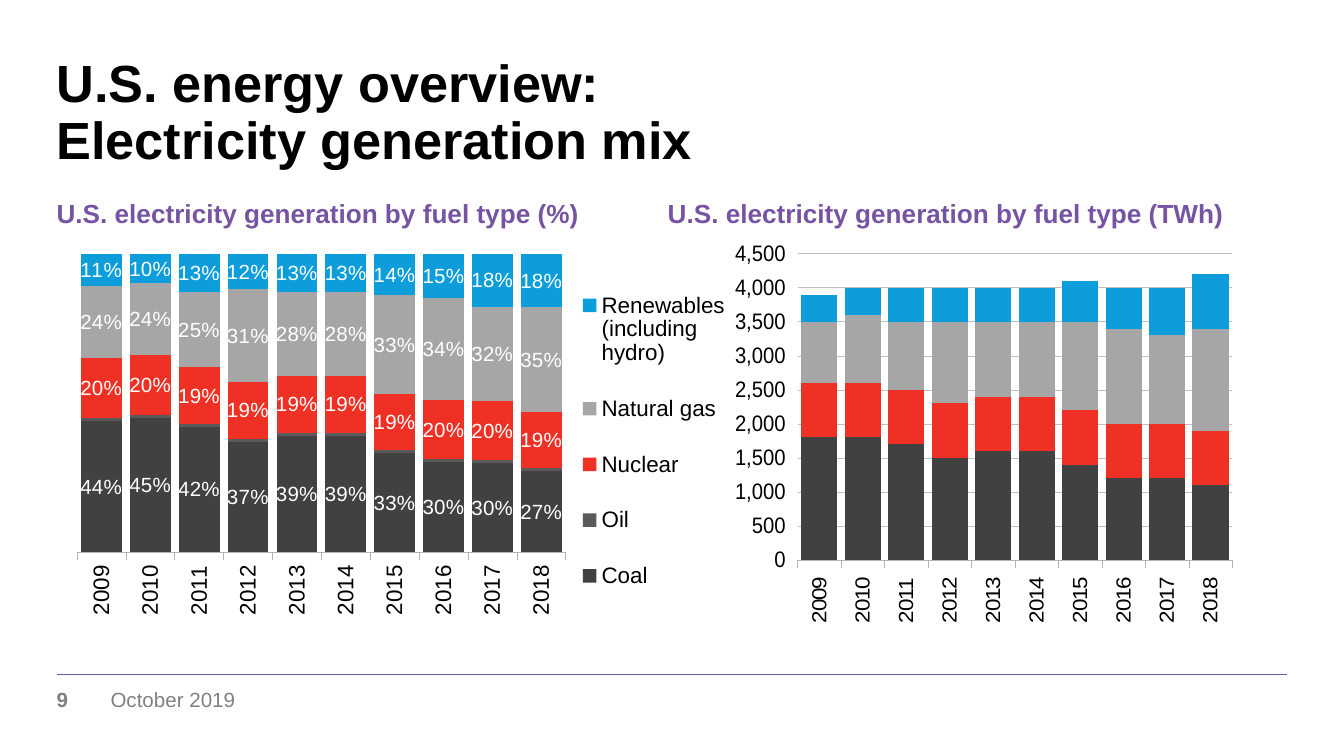
from lxml import etree
from pptx import Presentation
from pptx.chart.data import CategoryChartData
from pptx.dml.color import RGBColor
from pptx.enum.chart import XL_AXIS_CROSSES as CROSSES
from pptx.enum.chart import XL_CHART_TYPE as CHART
from pptx.enum.chart import XL_LEGEND_POSITION as LEGEND
from pptx.enum.chart import XL_TICK_LABEL_POSITION as LABELS
from pptx.enum.chart import XL_TICK_MARK as TICK
from pptx.enum.shapes import MSO_CONNECTOR
from pptx.oxml.ns import qn
from pptx.util import Cm, Pt

BLACK = RGBColor(0x00, 0x00, 0x00)
WHITE = RGBColor(0xFF, 0xFF, 0xFF)
PURPLE = RGBColor(0x76, 0x54, 0xA3)
GRAY = RGBColor(0x80, 0x80, 0x80)
AXIS = RGBColor(0xB3, 0xB3, 0xB3)
GRID = RGBColor(0xC0, 0xC0, 0xC0)
COAL = RGBColor(0x41, 0x41, 0x41)
OIL = RGBColor(0x5A, 0x5A, 0x5A)
NUCLEAR = RGBColor(0xEE, 0x31, 0x24)
GAS = RGBColor(0xA6, 0xA6, 0xA6)
RENEWABLES = RGBColor(0x0D, 0x9D, 0xDB)
FUEL_COLORS = [COAL, OIL, NUCLEAR, GAS, RENEWABLES]
FUELS = ["Coal", "Oil", "Nuclear", "Natural gas", "Renewables (including hydro)"]
YEARS = [str(year) for year in range(2009, 2019)]
LEFT, RIGHT = 1.07, 24.33

SHARES = [
    [0.44, 0.45, 0.42, 0.37, 0.39, 0.39, 0.33, 0.30, 0.30, 0.27],
    [0.01] * 10,
    [0.20, 0.20, 0.19, 0.19, 0.19, 0.19, 0.19, 0.20, 0.20, 0.19],
    [0.24, 0.24, 0.25, 0.31, 0.28, 0.28, 0.33, 0.34, 0.32, 0.35],
    [0.11, 0.10, 0.13, 0.12, 0.13, 0.13, 0.14, 0.15, 0.18, 0.18],
]
TWH = [
    [1800, 1800, 1700, 1500, 1600, 1600, 1400, 1200, 1200, 1100],
    [0] * 10,
    [800] * 10,
    [900, 1000, 1000, 1200, 1100, 1100, 1300, 1400, 1300, 1500],
    [400, 400, 500, 500, 500, 500, 600, 600, 700, 800],
]


def add_text(s, text, x, y, w, h, size=11, color=GRAY, bold=False, spacing=None, before=None):
    tf = s.shapes.add_textbox(Cm(x), Cm(y), Cm(w), Cm(h)).text_frame
    tf.word_wrap = True
    tf.margin_left = tf.margin_top = tf.margin_right = tf.margin_bottom = 0
    p = tf.paragraphs[0]
    p.line_spacing = spacing
    p.space_before = before
    r = p.add_run()
    r.text = text
    r.font.name = "Arial"
    r.font.size = Pt(size)
    r.font.bold = bold
    r.font.color.rgb = color


def set_layout(parent, index, box, inner=False):
    for old in parent.findall(qn("c:layout")):
        parent.remove(old)
    layout = etree.Element(qn("c:layout"))
    manual = etree.SubElement(layout, qn("c:manualLayout"))
    parts = [("layoutTarget", "inner")] if inner else []
    parts += [("xMode", "edge"), ("yMode", "edge"), *zip("xywh", box)]
    for tag, value in parts:
        etree.SubElement(manual, qn(f"c:{tag}")).set("val", str(value))
    parent.insert(index, layout)


prs = Presentation()
prs.slide_width, prs.slide_height = Cm(25.4), Cm(14.29)
s = prs.slides.add_slide(prs.slide_layouts[6])

line = s.shapes.add_connector(MSO_CONNECTOR.STRAIGHT, Cm(LEFT), Cm(12.75), Cm(RIGHT), Cm(12.75))
line.line.color.rgb = PURPLE
line.line.width = Pt(0.5)
etree.SubElement(line._element.spPr, qn("a:effectLst"))

add_text(s, "9", LEFT, 12.98, 0.86, 0.69, bold=True)
add_text(s, "October 2019", 2.09, 12.98, 17.45, 0.41)
add_text(s, "U.S. energy overview: Electricity generation mix", LEFT, 1.09, 15.21, 2.26,
         size=28, color=BLACK, bold=True, spacing=0.9)
add_text(s, "U.S. electricity generation by fuel type (%)", LEFT, 3.73, 11.2, 0.69,
         size=14, color=PURPLE, bold=True)
add_text(s, "U.S. electricity generation by fuel type (TWh)", 12.62, 3.73, 12.27, 0.69,
         size=14, color=PURPLE, bold=True)

charts = []
for kind, values, x, w, box in [
    (CHART.COLUMN_STACKED_100, SHARES, LEFT, 12.83, (0.03, 0.05, 0.72, 0.75)),
    (CHART.COLUMN_STACKED, TWH, 13.89, 10.44, (0.02, 0.05, 0.87, 0.77)),
]:
    data = CategoryChartData()
    data.categories = YEARS
    for fuel, vals in zip(FUELS, values):
        data.add_series(fuel, vals)
    chart = s.shapes.add_chart(kind, Cm(x), Cm(4.42), Cm(w), Cm(7.52), data).chart
    chart.has_title = False
    chart.has_legend = False
    chart.font.name = "Arial"
    chart.font.size = Pt(11)
    chart.font.color.rgb = BLACK
    plot = chart.plots[0]
    plot.gap_width = 20
    plot.overlap = 100
    plot.vary_by_categories = False
    for series, color in zip(plot.series, FUEL_COLORS):
        series.format.fill.solid()
        series.format.fill.fore_color.rgb = color
    cat = chart.category_axis
    cat.major_tick_mark = TICK.OUTSIDE
    cat.tick_label_position = LABELS.LOW
    cat.tick_labels.font.size = Pt(12)
    cat.format.line.color.rgb = AXIS
    cat.format.line.width = Pt(0.25)
    cat._element.find(qn("c:txPr")).find(qn("a:bodyPr")).set("rot", "-5400000")
    set_layout(chart._chartSpace.chart.plotArea, 0, box, inner=True)
    charts.append(chart)

share_chart, twh_chart = charts

val = share_chart.value_axis
val.visible = False
val.has_major_gridlines = False
val.maximum_scale = 1
val.major_unit = 0.2
for series in share_chart.plots[0].series:
    if series.name != "Oil":
        labels = series.data_labels
        labels.show_value = True
        labels.number_format = "0%"
        labels.number_format_is_linked = False
        labels.font.size = Pt(11)
        labels.font.color.rgb = WHITE
share_chart.has_legend = True
legend = share_chart.legend
legend.position = LEGEND.RIGHT
legend.include_in_layout = False
legend.font.size = Pt(12)
set_layout(legend._element, 1, (0.76, 0.07, 0.24, 0.9))

val = twh_chart.value_axis
twh_chart.category_axis.crosses = CROSSES.MAXIMUM
val.minimum_scale = 0
val.maximum_scale = 4500
val.major_unit = 500
val.major_tick_mark = TICK.OUTSIDE
val.tick_labels.font.size = Pt(12)
val.tick_labels.number_format = "#,##0"
val.tick_labels.number_format_is_linked = False
val.format.line.fill.background()
val.major_gridlines.format.line.color.rgb = GRID
val.major_gridlines.format.line.width = Pt(0.25)

prs.save("out.pptx")
